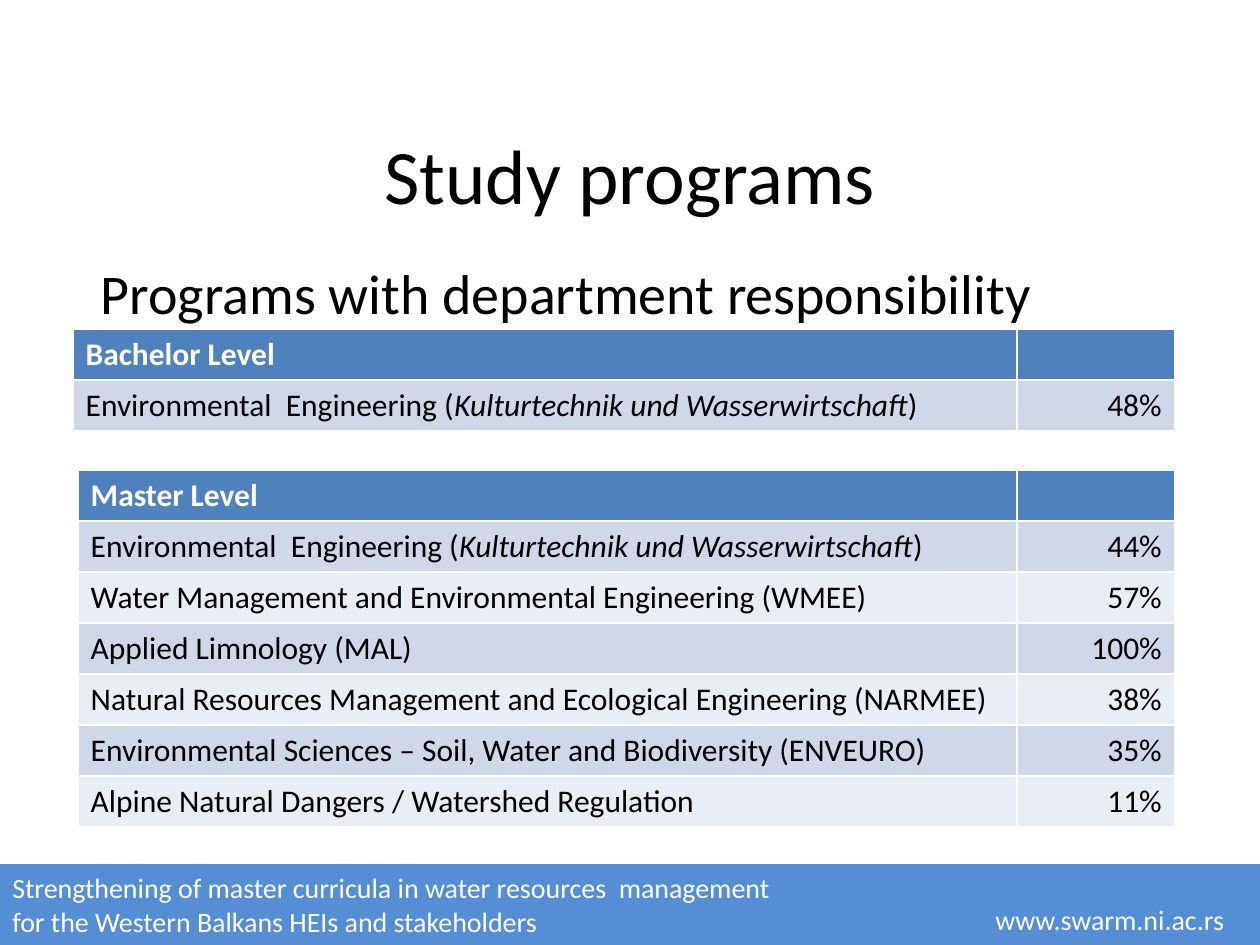
"""Build the study programs slide with two department responsibility tables."""
from pptx import Presentation
from pptx.dml.color import RGBColor
from pptx.enum.shapes import MSO_SHAPE as Shape
from pptx.enum.text import MSO_ANCHOR as Anchor, PP_ALIGN as Align
from pptx.util import Inches, Pt

WIDTH, HEIGHT = 10, 7.5
FOOTER_TOP, FOOTER_HEIGHT = 6.86, 0.64
ROW_HEIGHT, SHARE_WIDTH, TABLE_RIGHT = 0.405, 1.25, 9.32
BLACK, WHITE, FOOTER_BLUE, HEADER_BLUE = "000000", "FFFFFF", "558ED5", "4F81BD"
BANDS = ("D0D8E8", "E9EDF4")

ENGINEERING = (
    ("Environmental  Engineering (", False),
    ("Kulturtechnik und Wasserwirtschaft", True),
    (")", False),
)
LEVELS = [
    ("Bachelor Level", 0.58, 2.61, [(ENGINEERING, "48%")]),
    ("Master Level", 0.62, 3.73, [
        (ENGINEERING, "44%"),
        ("Water Management and Environmental Engineering (WMEE)", "57%"),
        ("Applied Limnology (MAL)", "100%"),
        ("Natural Resources Management and Ecological Engineering (NARMEE)", "38%"),
        ("Environmental Sciences – Soil, Water and Biodiversity (ENVEURO)", "35%"),
        ("Alpine Natural Dangers / Watershed Regulation", "11%"),
    ]),
]
TEXTS = [
    (["Strengthening of master curricula in water resources  management",
      "for the Western Balkans HEIs and stakeholders"],
     (0, FOOTER_TOP, 6.66, FOOTER_HEIGHT), 16, WHITE, Align.LEFT, {}),
    (["www.swarm.ni.ac.rs"], (7.75, 7.1, 2.16, 0.4), 16, WHITE, Align.LEFT,
     {"word_wrap": False, "margin_left": Inches(0.15), "vertical_anchor": Anchor.MIDDLE}),
    (["Study programs"], (0.5, 0.92, 9, 0.92), 44, BLACK, Align.CENTER,
     {"vertical_anchor": Anchor.MIDDLE}),
    (["Programs with department responsibility"], (0.5, 2, 9, 4.7), 32, BLACK,
     Align.LEFT, {"margin_left": Inches(0.3)}),
]


def color(value):
    """Turn a hex string into a colour."""
    return RGBColor.from_string(value)


def paint(target, value):
    """Give a shape or cell a solid fill."""
    target.fill.solid()
    target.fill.fore_color.rgb = color(value)


def write(paragraph, content, size, ink, align=Align.LEFT, bold=False):
    """Write a string or (words, italic) pairs into a paragraph."""
    paragraph.alignment = align
    pieces = [(content, False)] if isinstance(content, str) else content
    for words, italic in pieces:
        run = paragraph.add_run()
        run.text = words
        look = {"name": "Calibri", "size": Pt(size), "bold": bold, "italic": italic}
        for key, value in look.items():
            setattr(run.font, key, value)
        run.font.color.rgb = color(ink)


def add_text(slide, lines, place, size, ink, align, settings):
    """Add a text box with one paragraph per line."""
    frame = slide.shapes.add_textbox(*map(Inches, place)).text_frame
    for key, value in ({"word_wrap": True} | settings).items():
        setattr(frame, key, value)
    for index, line in enumerate(lines):
        paragraph = frame.add_paragraph() if index else frame.paragraphs[0]
        write(paragraph, line, size, ink, align)


def add_level(slide, level, left, top, programs):
    """Add the table of one study level."""
    rows = [(level, "")] + programs
    width = TABLE_RIGHT - left
    place = (left, top, width, ROW_HEIGHT * len(rows))
    table = slide.shapes.add_table(len(rows), 2, *map(Inches, place)).table
    for column, span in zip(table.columns, (width - SHARE_WIDTH, SHARE_WIDTH)):
        column.width = Inches(span)
    for index, row in enumerate(rows):
        header = index == 0
        fill = HEADER_BLUE if header else BANDS[(index - 1) % 2]
        ink = WHITE if header else BLACK
        for column, (content, align) in enumerate(zip(row, (Align.LEFT, Align.RIGHT))):
            cell = table.cell(index, column)
            paint(cell, fill)
            if content:
                write(cell.text_frame.paragraphs[0], content, 18, ink, align, header)


def main():
    """Build and save the slide."""
    deck = Presentation()
    deck.slide_width, deck.slide_height = Inches(WIDTH), Inches(HEIGHT)
    slide = deck.slides.add_slide(deck.slide_layouts[6])
    footer_place = (0, FOOTER_TOP, WIDTH, FOOTER_HEIGHT)
    footer = slide.shapes.add_shape(Shape.FLOWCHART_PROCESS, *map(Inches, footer_place))
    footer.shadow.inherit = False
    footer.line.fill.background()
    paint(footer, FOOTER_BLUE)
    for text in TEXTS:
        add_text(slide, *text)
    for level in LEVELS:
        add_level(slide, *level)
    deck.save("out.pptx")


if __name__ == "__main__":
    main()
